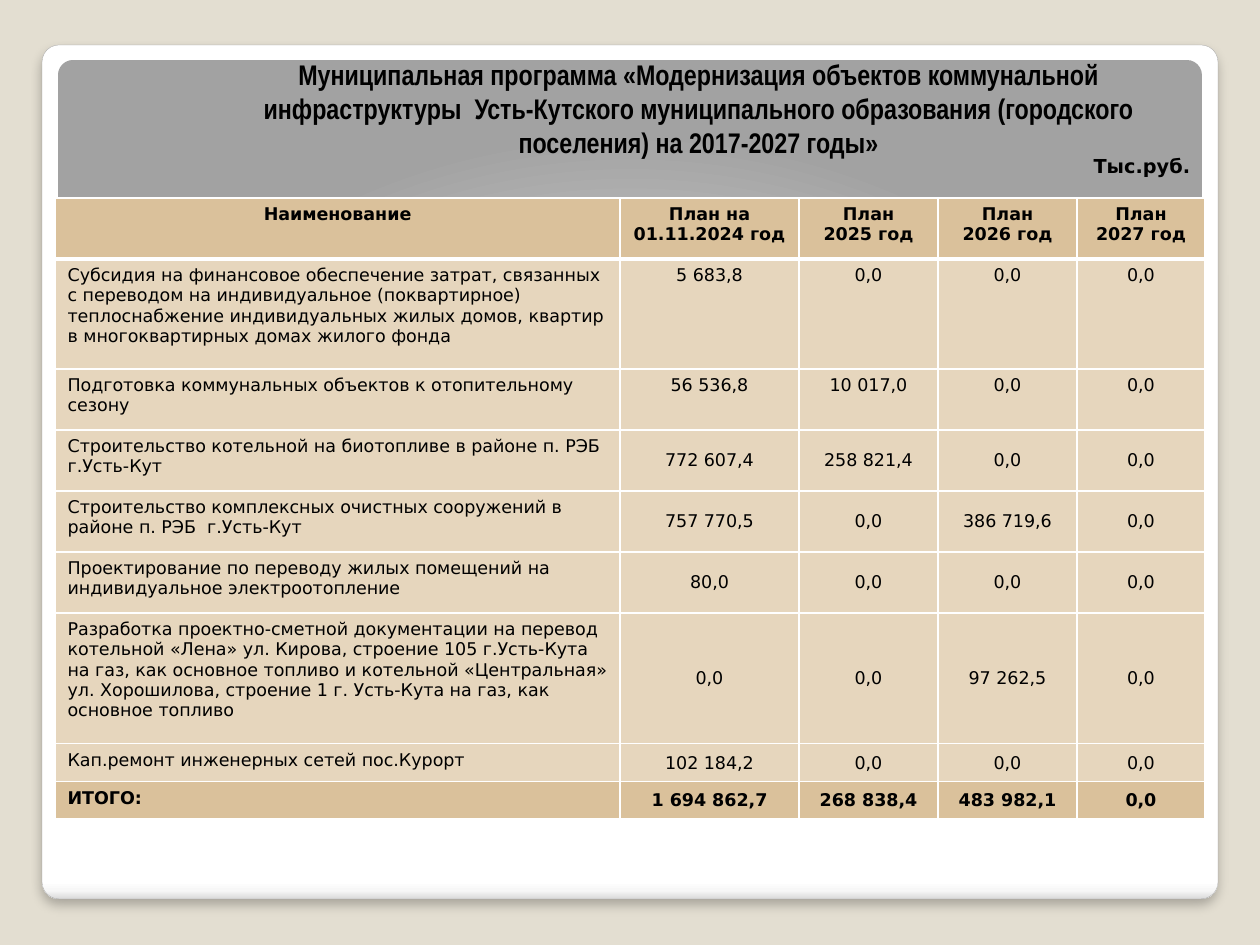
from lxml import etree
from pptx import Presentation
from pptx.dml.color import RGBColor
from pptx.enum.shapes import MSO_SHAPE
from pptx.enum.text import MSO_ANCHOR, PP_ALIGN
from pptx.oxml import parse_xml
from pptx.oxml.ns import nsdecls, qn
from pptx.util import Emu, Pt

ROUNDED = MSO_SHAPE.ROUNDED_RECTANGLE
LEFT, CENTER = PP_ALIGN.LEFT, PP_ALIGN.CENTER
TOP, MIDDLE, BOTTOM = MSO_ANCHOR.TOP, MSO_ANCHOR.MIDDLE, MSO_ANCHOR.BOTTOM
EMU_PER_PX = 914400 / 126
SAND, LIGHT_SAND, WHITE = "DAC19B", "E6D6BD", "FFFFFF"


def px(*lengths):
    return [Emu(round(length * EMU_PER_PX)) for length in lengths]


def write(frame, text, size=10, font="DejaVu Sans", color="000000", bold=False,
          align=CENTER, anchor=TOP):
    frame.word_wrap = True
    frame.vertical_anchor = anchor
    for index, line in enumerate(text.split("\n")):
        para = frame.add_paragraph() if index else frame.paragraphs[0]
        para.alignment = align
        span = para.add_run()
        span.text = line
        span.font.size = Pt(size)
        span.font.name = font
        span.font.bold = bold
        span.font.color.rgb = RGBColor.from_string(color)


deck = Presentation()
deck.slide_width, deck.slide_height = px(1260, 945)
page = deck.slides.add_slide(deck.slide_layouts[6])
page.background.fill.solid()
page.background.fill.fore_color.rgb = RGBColor.from_string("E3DED1")

# White card and grey panel, both with gradients
panels = [
    ((42, 45, 1176, 854), [(0, WHITE), (98, WHITE), (99, "F7F7F7"), (100, "DADADA")],
     '<a:lin ang="5400000" scaled="0"/>'),
    ((58, 60, 1144, 756), [(0, WHITE), (55, "E1E1E1"), (100, "A2A2A2")],
     '<a:path path="circle"><a:fillToRect l="50000" t="175000" r="50000" b="-75000"/></a:path>'),
]
boxes = []
for place, stops, direction in panels:
    box = page.shapes.add_shape(ROUNDED, *px(*place))
    box.adjustments[0] = 0.02
    box.shadow.inherit = False
    box.line.fill.background()
    stop_xml = "".join(f'<a:gs pos="{position * 1000}"><a:srgbClr val="{color}"/></a:gs>'
                       for position, color in stops)
    box._element.spPr.find(qn("a:prstGeom")).addnext(parse_xml(
        f'<a:gradFill {nsdecls("a")} rotWithShape="1"><a:gsLst>{stop_xml}</a:gsLst>'
        f'{direction}</a:gradFill>'))
    boxes.append(box)

# Card outline and soft shadow
card = boxes[0]
card.line.color.rgb = RGBColor.from_string("A4A4A4")
card.line.width = Pt(0.16)
shadow = etree.SubElement(card._element.spPr.find(qn("a:effectLst")), qn("a:outerShdw"),
                          blurRad=str(Pt(6)), dist=str(Pt(4)), dir="5400000",
                          algn="t", rotWithShape="0")
shade = etree.SubElement(shadow, qn("a:srgbClr"), val="000000")
etree.SubElement(shade, qn("a:alpha"), val="25000")

# Title
title = page.shapes.add_textbox(*px(192, 55, 1013, 110))
write(title.text_frame,
      "Муниципальная программа «Модернизация объектов коммунальной инфраструктуры  "
      "Усть-Кутского муниципального образования (городского поселения) на 2017-2027 годы»",
      size=16.2, font="Arial Narrow", bold=True, anchor=BOTTOM)

# Budget table
rows = [
    ("Наименование", "План на 01.11.2024 год", "План\n2025 год", "План\n2026 год",
     "План\n2027 год"),
    ("Субсидия на финансовое обеспечение затрат, связанных с переводом на индивидуальное "
     "(поквартирное) теплоснабжение индивидуальных жилых домов, квартир в многоквартирных "
     "домах жилого фонда", "5 683,8", "0,0", "0,0", "0,0"),
    ("Подготовка коммунальных объектов к отопительному сезону",
     "56 536,8", "10 017,0", "0,0", "0,0"),
    ("Строительство котельной на биотопливе в районе п. РЭБ г.Усть-Кут",
     "772 607,4", "258 821,4", "0,0", "0,0"),
    ("Строительство комплексных очистных сооружений в районе п. РЭБ  г.Усть-Кут",
     "757 770,5", "0,0", "386 719,6", "0,0"),
    ("Проектирование по переводу жилых помещений на индивидуальное электроотопление",
     "80,0", "0,0", "0,0", "0,0"),
    ("Разработка проектно-сметной документации на перевод котельной «Лена» ул. Кирова, "
     "строение 105 г.Усть-Кута на газ, как основное топливо и котельной «Центральная» "
     "ул. Хорошилова, строение 1 г. Усть-Кута на газ, как основное топливо",
     "0,0", "0,0", "97 262,5", "0,0"),
    ("Кап.ремонт инженерных сетей пос.Курорт", "102 184,2", "0,0", "0,0", "0,0"),
    ("ИТОГО:", "1 694 862,7", "268 838,4", "483 982,1", "0,0"),
]
widths = [565, 179, 139, 139, 128]
heights = [61, 110, 61, 61, 61, 61, 131, 38, 37]
table = page.shapes.add_table(len(rows), len(widths),
                              *px(55, 198, sum(widths), sum(heights))).table
table.first_row = table.horz_banding = False
for column, width in zip(table.columns, px(*widths)):
    column.width = width
for row, height in zip(table.rows, px(*heights)):
    row.height = height

last = len(rows) - 1
for r, row in enumerate(rows):
    strong = r in (0, last)
    for c, text in enumerate(row):
        cell = table.cell(r, c)
        tight = r > 2 and c > 0
        if tight:
            cell.margin_left, cell.margin_top, cell.margin_right, cell.margin_bottom = px(1, 1, 1, 0)
        write(cell.text_frame, text, bold=strong, align=LEFT if r and not c else CENTER)
        cell.vertical_anchor = MIDDLE if tight else TOP
        cell.fill.solid()
        cell.fill.fore_color.rgb = RGBColor.from_string(SAND if strong else LIGHT_SAND)
        # White borders, thick under the header
        for index, side in enumerate("LRTB"):
            thick = (r, side) in ((0, "B"), (1, "T"))
            cell._tc.get_or_add_tcPr().insert(index, parse_xml(
                f'<a:ln{side} {nsdecls("a")} w="{Pt(3 if thick else 1)}"><a:solidFill>'
                f'<a:srgbClr val="{WHITE}"/></a:solidFill></a:ln{side}>'))

# Unit note
unit = page.shapes.add_textbox(*px(1079, 150, 126, 31))
write(unit.text_frame, "Тыс.руб.", size=11, bold=True, anchor=MIDDLE)

deck.save("out.pptx")
